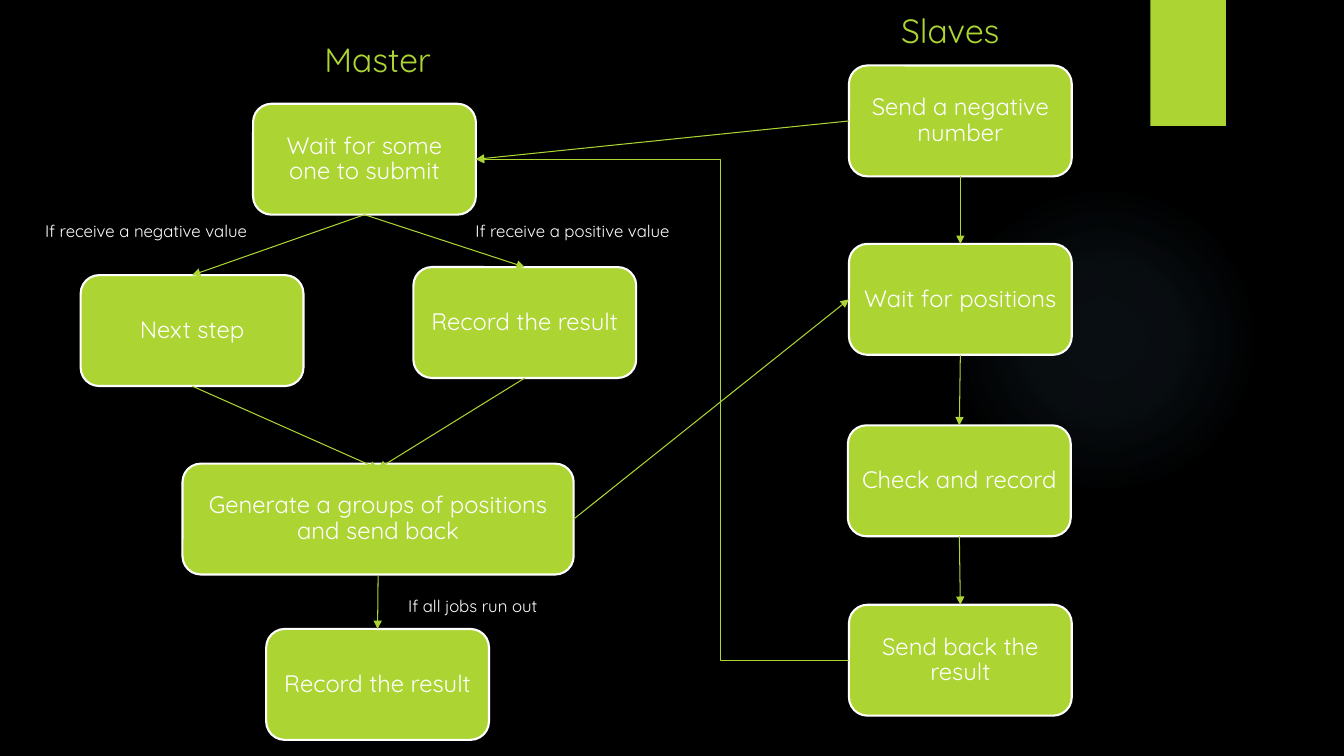
"""Build the master and slaves flow chart slide."""
from dataclasses import dataclass

from lxml import etree
from pptx import Presentation
from pptx.dml.color import RGBColor
from pptx.enum.shapes import MSO_CONNECTOR, MSO_SHAPE
from pptx.enum.text import MSO_ANCHOR, PP_ALIGN
from pptx.oxml import parse_xml
from pptx.oxml.ns import nsdecls, qn
from pptx.util import Inches, Pt

STRAIGHT, ELBOW = MSO_CONNECTOR.STRAIGHT, MSO_CONNECTOR.ELBOW
RECT, ROUNDED, OVAL = MSO_SHAPE.RECTANGLE, MSO_SHAPE.ROUNDED_RECTANGLE, MSO_SHAPE.OVAL
CENTER = PP_ALIGN.CENTER
MIDDLE, BOTTOM = MSO_ANCHOR.MIDDLE, MSO_ANCHOR.BOTTOM
TOP_SITE, LEFT_SITE, BOTTOM_SITE, RIGHT_SITE = range(4)


@dataclass
class Theme:
    font: str = "Quicksand"
    black: RGBColor = RGBColor(0x00, 0x00, 0x00)
    green: RGBColor = RGBColor(0xAC, 0xD4, 0x33)
    white: RGBColor = RGBColor(0xFF, 0xFF, 0xFF)
    glow: str = "7AC4F0"
    heading: Pt = Pt(24)
    step: Pt = Pt(17)
    label: Pt = Pt(12)


theme = Theme()


def write(tf, text, size, color, anchor, spacing):
    tf.text = text
    tf.word_wrap = True
    tf.vertical_anchor = anchor
    p = tf.paragraphs[0]
    p.alignment = CENTER
    p.line_spacing = spacing
    p.space_before = Pt(0)
    font = p.runs[0].font
    font.name, font.size, font.bold = theme.font, size, False
    font.color.rgb = color


def add_block(kind, x, y, w, h):
    sp = s.shapes.add_shape(kind, Inches(x), Inches(y), Inches(w), Inches(h))
    sp.shadow.inherit = False
    sp.fill.solid()
    sp.fill.fore_color.rgb = theme.green
    sp.line.fill.background()
    return sp


prs = Presentation()
prs.slide_width, prs.slide_height = Inches(13.33), Inches(7.5)
s = prs.slides.add_slide(prs.slide_layouts.get_by_name("Comparison"))
s.background.fill.solid()
s.background.fill.fore_color.rgb = theme.black

glow = add_block(OVAL, 9.41, 1.83, 3.08, 3.08)
stops = "".join(
    f'<a:gs pos="{pos}000"><a:srgbClr val="{theme.glow}"><a:alpha val="{alpha}000"/></a:srgbClr></a:gs>'
    for pos, alpha in ((0, 7), (36, 6), (69, 0), (100, 0)))
gradient = parse_xml(
    f'<a:gradFill {nsdecls("a")}><a:gsLst>{stops}</a:gsLst><a:path path="circle">'
    '<a:fillToRect l="50000" t="50000" r="50000" b="50000"/></a:path></a:gradFill>')
solid = glow.fill._xPr.find(qn("a:solidFill"))
solid.getparent().replace(solid, gradient)

add_block(RECT, 11.41, 0, 0.75, 1.25)

steps = {
    "wait_submit": ("Wait for some one to submit", 2.51, 1.03, 2.21),
    "next_step": ("Next step", 0.8, 2.73, 2.21),
    "record": ("Record the result", 4.1, 2.65, 2.21),
    "generate": ("Generate a groups of positions and send back", 1.81, 4.6, 3.88),
    "finish": ("Record the result", 2.64, 6.24, 2.21),
    "send_negative": ("Send a negative number", 8.42, 0.65, 2.21),
    "wait_positions": ("Wait for positions", 8.42, 2.42, 2.21),
    "check": ("Check and record", 8.41, 4.22, 2.21),
    "send_result": ("Send back the result", 8.42, 6, 2.21),
}
boxes = {}
for name, (text, x, y, w) in steps.items():
    sp = boxes[name] = add_block(ROUNDED, x, y, w, 1.1)
    sp.line.color.rgb = theme.white
    sp.line.width = Pt(1.5)
    tf = sp.text_frame
    tf.margin_left = tf.margin_right = tf.margin_top = tf.margin_bottom = Inches(0.07)
    write(tf, text, theme.step, theme.white, MIDDLE, 0.9)

headings = {1: ("Master", 1.34, 0.21), 3: ("Slaves", 7.02, -0.08)}
for ph in list(s.placeholders):
    idx = ph.placeholder_format.idx
    if idx not in headings:
        ph.element.getparent().remove(ph.element)
        continue
    text, x, y = headings[idx]
    ph.left, ph.top, ph.width, ph.height = Inches(x), Inches(y), Inches(4.81), Inches(0.63)
    write(ph.text_frame, text, theme.heading, theme.green, BOTTOM, 1.0)

links = [
    ("wait_submit", BOTTOM_SITE, "next_step", TOP_SITE, STRAIGHT),
    ("wait_submit", BOTTOM_SITE, "record", TOP_SITE, STRAIGHT),
    ("next_step", BOTTOM_SITE, "generate", TOP_SITE, STRAIGHT),
    ("record", BOTTOM_SITE, "generate", TOP_SITE, STRAIGHT),
    ("generate", BOTTOM_SITE, "finish", TOP_SITE, STRAIGHT),
    ("generate", RIGHT_SITE, "wait_positions", LEFT_SITE, STRAIGHT),
    ("send_negative", LEFT_SITE, "wait_submit", RIGHT_SITE, STRAIGHT),
    ("send_negative", BOTTOM_SITE, "wait_positions", TOP_SITE, STRAIGHT),
    ("wait_positions", BOTTOM_SITE, "check", TOP_SITE, STRAIGHT),
    ("check", BOTTOM_SITE, "send_result", TOP_SITE, STRAIGHT),
    ("send_result", LEFT_SITE, "wait_submit", RIGHT_SITE, ELBOW),
]
for source, source_site, target, target_site, kind in links:
    c = s.shapes.add_connector(kind, 0, 0, Inches(3.75), Inches(4.65))
    c.begin_connect(boxes[source], source_site)
    if target != "generate":
        c.end_connect(boxes[target], target_site)
    c.line.color.rgb = theme.green
    c.line.width = Pt(0.75)
    etree.SubElement(c.line._get_or_add_ln(), qn("a:tailEnd"), type="triangle")
    spPr = c._element.spPr
    etree.SubElement(spPr, qn("a:effectLst"))
    if kind == ELBOW:
        guides = spPr.find(qn("a:prstGeom")).get_or_add_avLst()
        etree.SubElement(guides, qn("a:gd"), name="adj1", fmla="val 34400")

for text, x, y in (("If receive a negative value", -0.38, 2.16),
                   ("If receive a positive value", 3.85, 2.16),
                   ("If all jobs run out", 2.86, 5.88)):
    tb = s.shapes.add_textbox(Inches(x), Inches(y), Inches(3.66), Inches(0.28))
    write(tb.text_frame, text, theme.label, theme.white, MSO_ANCHOR.TOP, 0.9)

prs.save("out.pptx")
